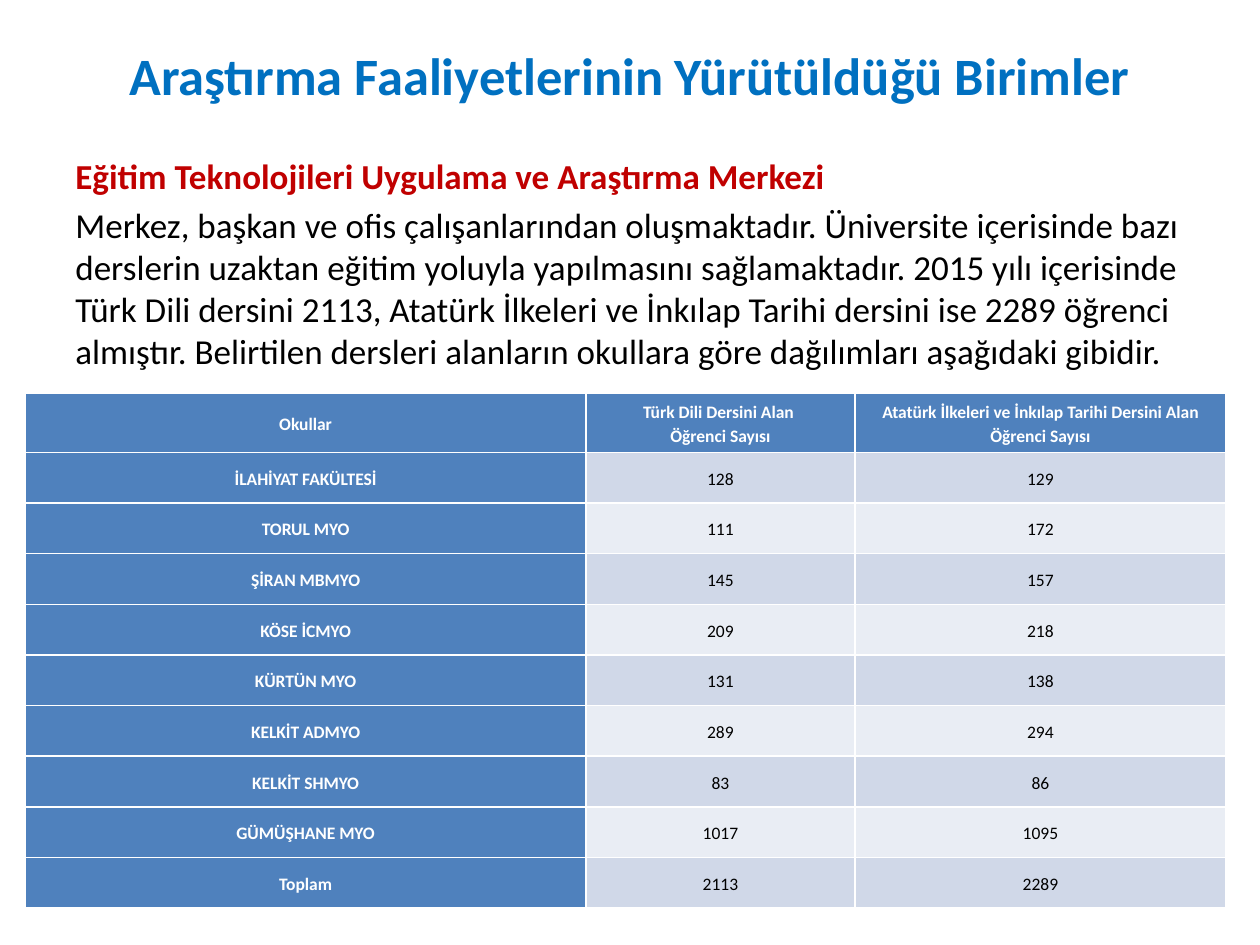
from pptx import Presentation
from pptx.dml.color import RGBColor
from pptx.enum.text import MSO_ANCHOR, PP_ALIGN
from pptx.util import Inches, Pt

CENTER, LEFT = PP_ALIGN.CENTER, PP_ALIGN.LEFT
MIDDLE, TOP = MSO_ANCHOR.MIDDLE, MSO_ANCHOR.TOP

WHITE = RGBColor(0xFF, 0xFF, 0xFF)
BLACK = RGBColor(0x00, 0x00, 0x00)
TITLE_BLUE = RGBColor(0x00, 0x70, 0xC0)
HEADING_RED = RGBColor(0xC0, 0x00, 0x00)
HEADER_BLUE = RGBColor(0x4F, 0x81, 0xBD)
BANDS = (RGBColor(0xD0, 0xD8, 0xE8), RGBColor(0xE9, 0xED, 0xF4))

TITLE = "Araştırma Faaliyetlerinin Yürütüldüğü Birimler"
HEADING = "Eğitim Teknolojileri Uygulama ve Araştırma Merkezi"
DESCRIPTION = (
    "Merkez, başkan ve ofis çalışanlarından oluşmaktadır. Üniversite içerisinde "
    "bazı derslerin uzaktan eğitim yoluyla yapılmasını sağlamaktadır. 2015 yılı "
    "içerisinde Türk Dili dersini 2113, Atatürk İlkeleri ve İnkılap Tarihi dersini "
    "ise 2289 öğrenci almıştır. Belirtilen dersleri alanların okullara göre "
    "dağılımları aşağıdaki gibidir."
)
ENROLMENT = [
    ("Okullar", "Türk Dili Dersini Alan \nÖğrenci Sayısı",
     "Atatürk İlkeleri ve İnkılap Tarihi Dersini Alan Öğrenci Sayısı"),
    ("İLAHİYAT FAKÜLTESİ", 128, 129),
    ("TORUL MYO", 111, 172),
    ("ŞİRAN MBMYO", 145, 157),
    ("KÖSE İCMYO", 209, 218),
    ("KÜRTÜN MYO", 131, 138),
    ("KELKİT ADMYO", 289, 294),
    ("KELKİT SHMYO", 83, 86),
    ("GÜMÜŞHANE MYO", 1017, 1095),
    ("Toplam", 2113, 2289),
]


def set_attributes(target, values):
    for name, value in values.items():
        setattr(target, name, value)


class SlideBuilder:
    """Places elements on a grid of 100 columns by 75 rows."""

    FONT = "Calibri"
    UNIT = Inches(0.1)

    def __init__(self, presentation):
        set_attributes(presentation, {"slide_width": 100 * self.UNIT,
                                      "slide_height": 75 * self.UNIT})
        title_only = presentation.slide_layouts[5]
        self.slide = presentation.slides.add_slide(title_only)

    def grid(self, *lengths):
        return [round(length * self.UNIT) for length in lengths]

    def add_text(self, paragraph, text, size, color, bold=False, **paragraph_format):
        set_attributes(paragraph, paragraph_format)
        run = paragraph.add_run()
        run.text = text
        set_attributes(run.font, {"name": self.FONT, "size": Pt(size), "bold": bold})
        run.font.color.rgb = color

    def title(self, text, *box):
        title = self.slide.shapes.title
        set_attributes(title, dict(zip(("left", "top", "width", "height"),
                                       self.grid(*box))))
        title.text_frame.vertical_anchor = MIDDLE
        self.add_text(title.text_frame.paragraphs[0], text, 30, TITLE_BLUE, True,
                      alignment=CENTER)

    def body(self, heading, description, *box):
        frame = self.slide.shapes.add_textbox(*self.grid(*box)).text_frame
        set_attributes(frame, {"word_wrap": True, "vertical_anchor": TOP})
        spacing = {"alignment": LEFT, "space_before": Pt(4)}
        self.add_text(frame.paragraphs[0], heading, 20, HEADING_RED, True, **spacing)
        self.add_text(frame.add_paragraph(), description, 20, BLACK, **spacing)

    def table(self, rows, left, top, column_widths, header_height, row_height):
        height = header_height + row_height * (len(rows) - 1)
        box = self.grid(left, top, sum(column_widths), height)
        table = self.slide.shapes.add_table(len(rows), len(column_widths), *box).table
        table.first_col = True
        for column, width in zip(table.columns, self.grid(*column_widths)):
            column.width = width
        for row_index, values in enumerate(rows):
            is_header = row_index == 0
            table.rows[row_index].height = self.grid(
                header_height if is_header else row_height)[0]
            for column_index, value in enumerate(values):
                label = is_header or column_index == 0
                fill = HEADER_BLUE if label else BANDS[(row_index - 1) % 2]
                self.cell(table.cell(row_index, column_index), str(value), fill, label)

    def cell(self, cell, text, fill, label):
        side = Inches(0.05)
        set_attributes(cell, {"vertical_anchor": MIDDLE, "margin_left": side,
                              "margin_right": side, "margin_top": 0,
                              "margin_bottom": 0})
        cell.fill.solid()
        cell.fill.fore_color.rgb = fill
        for index, line in enumerate(text.split("\n")):
            frame = cell.text_frame
            paragraph = frame.add_paragraph() if index else frame.paragraphs[0]
            self.add_text(paragraph, line, 10, WHITE if label else BLACK, label,
                          alignment=CENTER, line_spacing=1.15)


def main():
    presentation = Presentation()
    builder = SlideBuilder(presentation)
    builder.title(TITLE, 5, -0.3, 90, 12.5)
    builder.body(HEADING, DESCRIPTION, 5, 11.8, 89.9, 19.4)
    builder.table(ENROLMENT, left=2, top=31.2, column_widths=(44.5, 21.35, 29.45),
                  header_height=4.7, row_height=4.02)
    presentation.save("out.pptx")


if __name__ == "__main__":
    main()
